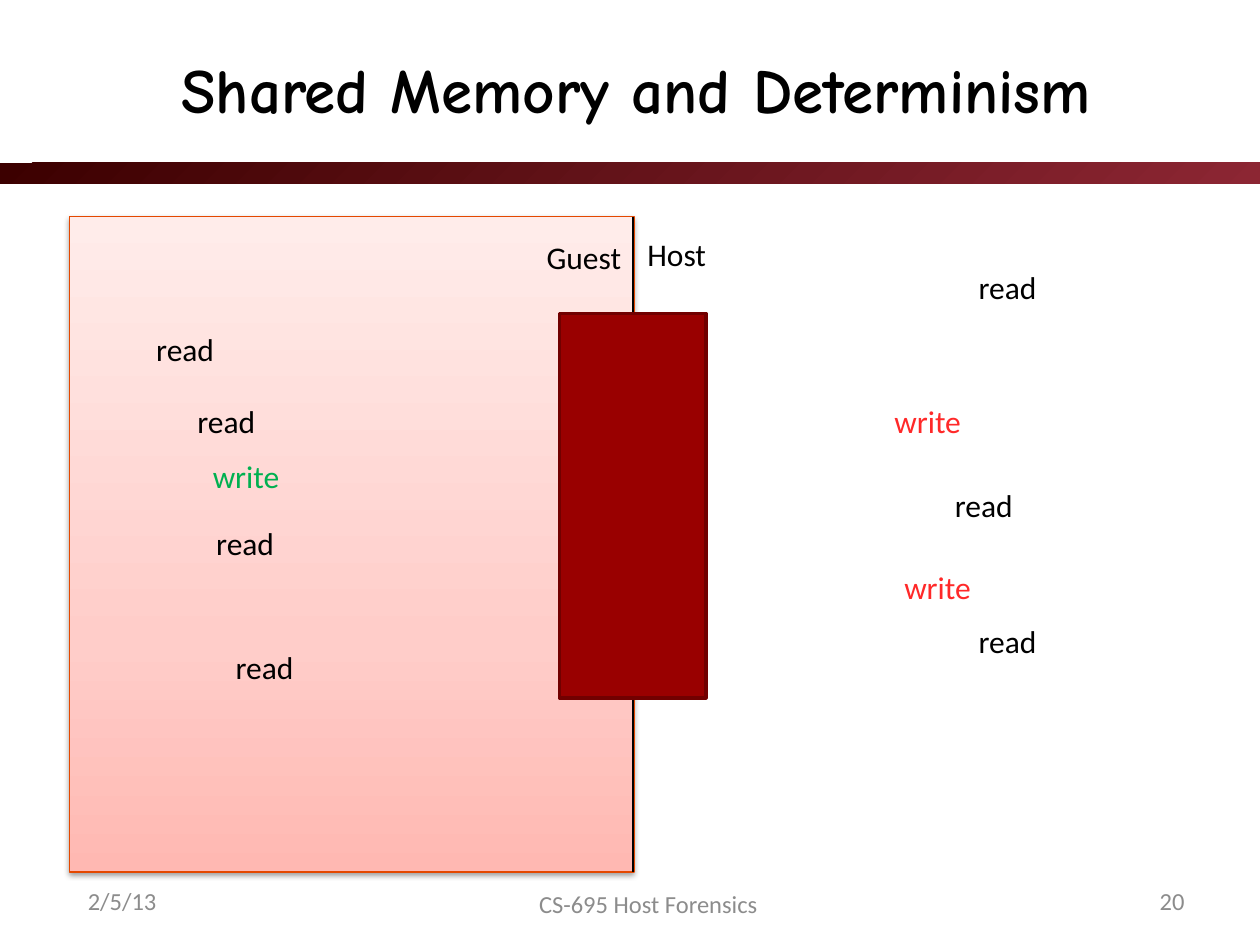
import pptx
import pptx.dml.color
import pptx.enum.shapes
import pptx.enum.text
import pptx.oxml
import pptx.oxml.ns
import pptx.util
from lxml import etree

Cm = pptx.util.Cm
Pt = pptx.util.Pt
ALIGN = pptx.enum.text.PP_ALIGN
ANCHOR = pptx.enum.text.MSO_ANCHOR
qn = pptx.oxml.ns.qn

BLACK = "000000"
GRAY = "8C8C8C"
RED = "FF2929"
GREEN = "00B050"


def rgb(value):
    return pptx.dml.color.RGBColor.from_string(value)


class SlideBuilder:
    body_font = "Calibri"
    title_font = "Comic Neue"

    def __init__(self, slide):
        self.slide = slide

    def rect(self, x, y, w, h, fill=None, line=None, line_width=0.75):
        sp = self.slide.shapes.add_shape(
            pptx.enum.shapes.MSO_SHAPE.RECTANGLE, Cm(x), Cm(y), Cm(w), Cm(h))
        sp.shadow.inherit = False
        if fill:
            sp.fill.solid()
            sp.fill.fore_color.rgb = rgb(fill)
        if line:
            sp.line.color.rgb = rgb(line)
            sp.line.width = Pt(line_width)
        else:
            sp.line.fill.background()
        return sp

    def gradient(self, sp, stops, angle):
        sp.fill.gradient()
        sp.fill.gradient_angle = angle
        gs_list = sp._element.spPr.find(".//" + qn("a:gsLst"))
        for gs in list(gs_list):
            gs_list.remove(gs)
        for position, color in stops:
            gs = etree.SubElement(gs_list, qn("a:gs"), pos=str(position * 1000))
            etree.SubElement(gs, qn("a:srgbClr"), val=color)

    def shadow(self, sp, color, opacity, blur, distance):
        effects = sp._element.spPr.find(qn("a:effectLst"))
        outer = etree.SubElement(
            effects, qn("a:outerShdw"), blurRad=str(Pt(blur)),
            dist=str(Pt(distance)), dir="5400000", rotWithShape="0")
        clr = etree.SubElement(outer, qn("a:srgbClr"), val=color)
        etree.SubElement(clr, qn("a:alpha"), val=str(opacity * 1000))

    def line(self, x1, y1, x2, y2, color, width=0.75):
        cxn = self.slide.shapes.add_connector(
            pptx.enum.shapes.MSO_CONNECTOR.STRAIGHT,
            Cm(x1), Cm(y1), Cm(x2), Cm(y2))
        cxn.line.color.rgb = rgb(color)
        cxn.line.width = Pt(width)
        etree.SubElement(cxn._element.spPr, qn("a:effectLst"))

    def text(self, text, x, y, w, h, size, color=BLACK, font=body_font,
             bold=False, align=ALIGN.LEFT, anchor=ANCHOR.MIDDLE, wrap=True):
        sp = self.slide.shapes.add_textbox(Cm(x), Cm(y), Cm(w), Cm(h))
        tf = sp.text_frame
        tf.text = text
        tf.word_wrap = wrap
        tf.vertical_anchor = anchor
        p = tf.paragraphs[0]
        p.alignment = align
        r = p.runs[0]
        r.font.name = font
        r.font.size = Pt(size)
        r.font.bold = bold
        r.font.color.rgb = rgb(color)
        return sp

    def label(self, text, x, y, w=1.7, color=BLACK):
        sp = self.text(text, x, y, w, 1.02, 18, color,
                       anchor=ANCHOR.TOP, wrap=False)
        sp.text_frame.auto_size = pptx.enum.text.MSO_AUTO_SIZE.SHAPE_TO_FIT_TEXT

    def footer(self, text, x, y, w, align):
        self.text(text, x, y, w, 1.02, 14, GRAY, align=align)


def main():
    prs = pptx.Presentation()
    prs.slide_width, prs.slide_height = Cm(25.4), Cm(19.05)
    s = SlideBuilder(prs.slides.add_slide(prs.slide_layouts[6]))

    title_bar = s.rect(0, 3.28, 25.4, 0.43)
    s.gradient(title_bar, [(0, "3C0000"), (100, "8C2633")], 315)

    guest = s.rect(1.4, 4.37, 11.38, 13.21, line="E44800")
    s.gradient(guest, [(0, "FFB8B2"), (35, "FFCDC9"), (100, "FFECEA")], 90)
    s.shadow(guest, BLACK, 38, 3.1, 1.6)

    s.text("Shared Memory and Determinism", 1.52, 0.38, 22.61, 2.79, 36,
           font=s.title_font, bold=True, align=ALIGN.CENTER)

    s.footer("2/5/13", 1.52, 17.65, 4.65, ALIGN.LEFT)
    s.footer("CS-695 Host Forensics", 9.91, 17.7, 6.32, ALIGN.CENTER)
    s.footer("20", 19.48, 17.65, 4.65, ALIGN.RIGHT)

    s.line(12.76, 4.37, 12.76, 17.58, BLACK)
    s.rect(11.28, 6.32, 2.95, 7.75, "990000", "710000", 2)
    s.label("Guest", 10.77, 4.67, 2.03)
    s.label("Host", 12.8, 4.62)

    guest_reads = [(2.9, 6.53), (3.73, 7.98), (4.11, 10.44), (4.5, 12.93)]
    host_reads = [(19.48, 5.28), (19, 9.68), (19.48, 12.42)]
    for x, y in guest_reads + host_reads:
        s.label("read", x, y)

    writes = [(4.04, 9.09, GREEN), (17.78, 7.98, RED), (17.98, 11.33, RED)]
    for x, y, color in writes:
        s.label("write", x, y, 1.88, color)

    prs.save("out.pptx")


if __name__ == "__main__":
    main()
